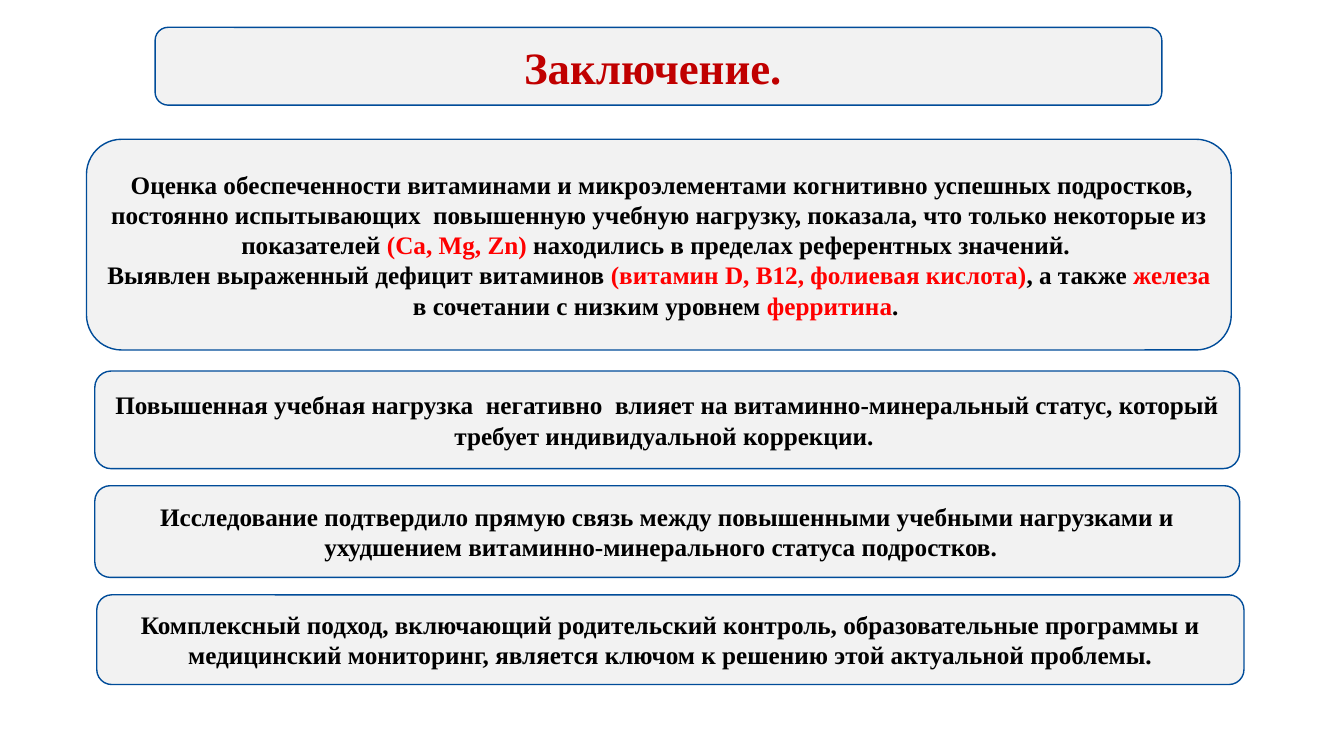
from dataclasses import dataclass

from pptx import Presentation
from pptx.dml.color import RGBColor
from pptx.enum.shapes import MSO_SHAPE as Shape
from pptx.enum.text import MSO_ANCHOR as Anchor, PP_ALIGN as Align
from pptx.util import Cm, Pt


@dataclass(frozen=True)
class Theme:
    """Colours, font and type sizes of the slide."""
    font: str = "Times New Roman"
    panel: str = "F2F2F2"
    border: str = "004C99"
    title: str = "C00000"
    body: str = "000000"
    accent: str = "FF0000"
    title_size: int = 32
    body_size: int = 18


class SlideBuilder:
    """Draws styled elements on the current slide."""

    def __init__(self, slide, theme):
        self.slide = slide
        self.theme = theme

    def panel(self, left, top, width, height, paragraphs, size):
        """Add a rounded panel holding paragraphs of (text, colour) runs."""
        panel = self.slide.shapes.add_shape(
            Shape.ROUNDED_RECTANGLE, Cm(left), Cm(top), Cm(width), Cm(height))
        panel.shadow.inherit = False
        panel.fill.solid()
        panel.fill.fore_color.rgb = RGBColor.from_string(self.theme.panel)
        panel.line.color.rgb = RGBColor.from_string(self.theme.border)
        panel.line.width = Pt(1)
        frame = panel.text_frame
        frame.word_wrap = True
        frame.vertical_anchor = Anchor.MIDDLE
        for index, runs in enumerate(paragraphs):
            paragraph = frame.add_paragraph() if index else frame.paragraphs[0]
            paragraph.alignment = Align.CENTER
            for text, colour in runs:
                self.run(paragraph, text, colour, size)

    def run(self, paragraph, text, colour, size):
        """Add one bold run to a paragraph."""
        run = paragraph.add_run()
        run.text = text
        run.font.name = self.theme.font
        run.font.size = Pt(size)
        run.font.bold = True
        run.font.color.rgb = RGBColor.from_string(colour)


def main():
    """Build the conclusion slide."""
    presentation = Presentation()
    presentation.slide_width, presentation.slide_height = Cm(33.87), Cm(19.05)
    theme = Theme()
    slide = presentation.slides.add_slide(presentation.slide_layouts[6])
    builder = SlideBuilder(slide, theme)

    builder.panel(3.91, 0.69, 25.37, 1.96,
                  [[("Заключение. ", theme.title)]], theme.title_size)

    assessment = [
        (" Оценка обеспеченности витаминами и микроэлементами когнитивно "
         "успешных подростков, постоянно испытывающих  повышенную учебную "
         "нагрузку, показала, что только некоторые из показателей ", theme.body),
        ("(Ca, Mg, Zn) ", theme.accent),
        ("находились в пределах референтных значений. ", theme.body),
    ]
    deficiency = [
        ("Выявлен выраженный дефицит витаминов ", theme.body),
        ("(витамин D, В12, фолиевая кислота)", theme.accent),
        (", а также ", theme.body),
        ("железа ", theme.accent),
        ("в сочетании с низким уровнем ", theme.body),
        ("ферритина", theme.accent),
        (". ", theme.body),
    ]
    builder.panel(2.18, 3.51, 28.85, 5.31, [assessment, deficiency], theme.body_size)

    conclusions = [
        (2.39, 9.35, 28.85, 2.46,
         "Повышенная учебная нагрузка  негативно  влияет на "
         "витаминно-минеральный статус, который требует индивидуальной коррекции. "),
        (2.39, 12.24, 28.85, 2.31,
         "Исследование подтвердило прямую связь между повышенными учебными "
         "нагрузками и ухудшением витаминно-минерального статуса подростков.  "),
        (2.44, 14.99, 28.91, 2.26,
         "Комплексный подход, включающий родительский контроль, образовательные "
         "программы и медицинский мониторинг, является ключом к решению этой "
         "актуальной проблемы."),
    ]
    for left, top, width, height, conclusion in conclusions:
        builder.panel(left, top, width, height,
                      [[(conclusion, theme.body)]], theme.body_size)

    presentation.save("out.pptx")


if __name__ == "__main__":
    main()
